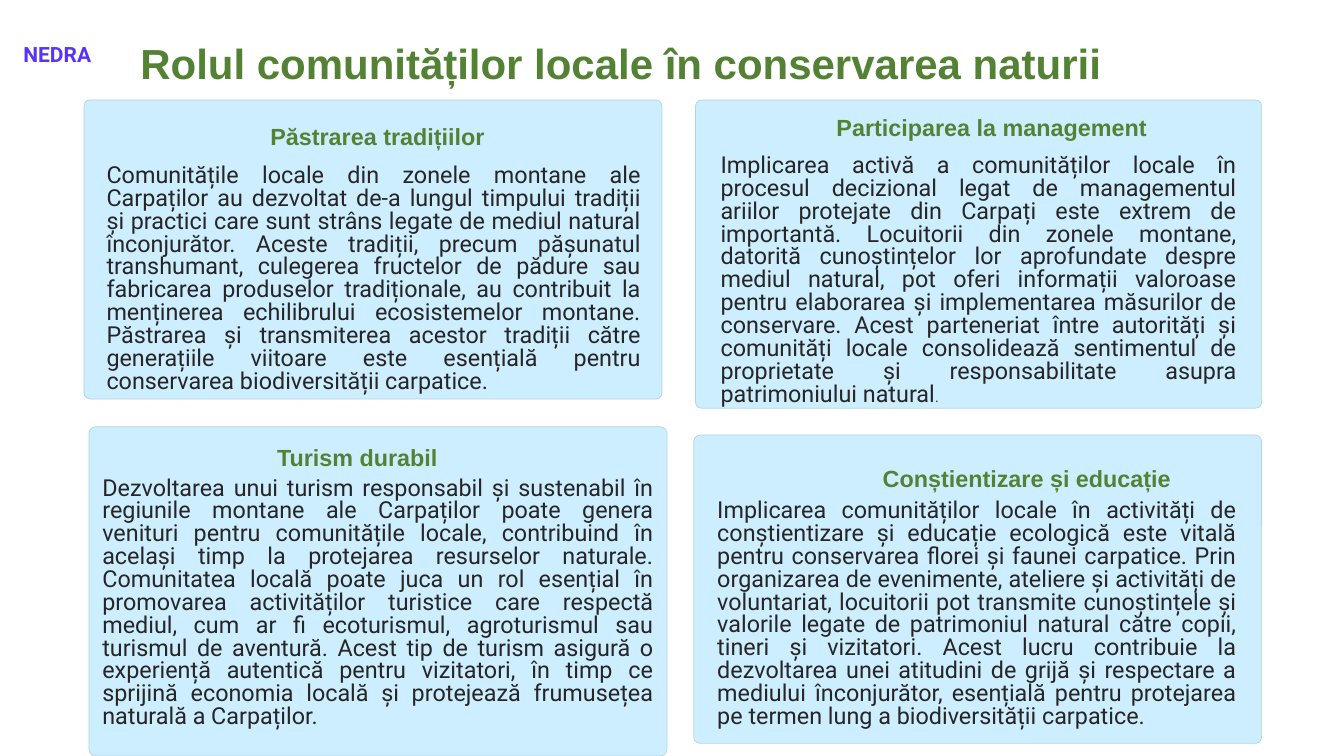
from dataclasses import dataclass

from pptx import Presentation
from pptx.dml.color import RGBColor
from pptx.enum.shapes import MSO_SHAPE
from pptx.enum.text import MSO_ANCHOR, MSO_AUTO_SIZE, PP_ALIGN
from pptx.util import Inches, Pt


@dataclass(frozen=True)
class Theme:
    heading_font: str = "Arial"
    body_font: str = "Roboto"
    green: str = "548235"
    ink: str = "272525"
    violet: str = "5A33F9"
    card_fill: str = "CCEEFF"
    card_line: str = "B2D4E5"
    title_size: float = 36
    text_size: float = 20
    label_size: float = 18
    small_size: float = 12.2


THEME = Theme()

CARDS = [
    {
        "box": (1, 1.19, 6.88, 3.56),
        "heading": "Păstrarea tradițiilor",
        "heading_box": (3.12, 1.47, 3.25, 0.19),
        "body": "Comunitățile locale din zonele montane ale Carpaților au dezvoltat de-a lungul timpului "
                "tradiții și practici care sunt strâns legate de mediul natural înconjurător. Aceste "
                "tradiții, precum pășunatul transhumant, culegerea fructelor de pădure sau fabricarea "
                "produselor tradiționale, au contribuit la menținerea echilibrului ecosistemelor montane. "
                "Păstrarea și transmiterea acestor tradiții către generațiile viitoare este esențială "
                "pentru conservarea biodiversității carpatice.",
        "body_box": (1.17, 1.92, 6.56, 3.26),
    },
    {
        "box": (8.28, 1.19, 6.74, 3.67),
        "heading": "Participarea la management",
        "heading_box": (9.86, 1.37, 2.91, 0.27),
        "body": "Implicarea activă a comunităților locale în procesul decizional legat de managementul "
                "ariilor protejate din Carpați este extrem de importantă. Locuitorii din zonele montane, "
                "datorită cunoștințelor lor aprofundate despre mediul natural, pot oferi informații "
                "valoroase pentru elaborarea și implementarea măsurilor de conservare. Acest parteneriat "
                "între autorități și comunități locale consolidează sentimentul de proprietate și "
                "responsabilitate asupra patrimoniului natural",
        "body_box": (8.48, 1.8, 6.34, 2.95),
        "ending": ".",
    },
    {
        "box": (1.06, 5.08, 6.88, 3.92),
        "heading": "Turism durabil",
        "heading_box": (3.2, 5.3, 2.13, 0.27),
        "body": "Dezvoltarea unui turism responsabil și sustenabil în regiunile montane ale Carpaților "
                "poate genera venituri pentru comunitățile locale, contribuind în același timp la "
                "protejarea resurselor naturale. Comunitatea locală poate juca un rol esențial în "
                "promovarea activităților turistice care respectă mediul, cum ar fi ecoturismul, "
                "agroturismul sau turismul de aventură. Acest tip de turism asigură o experiență autentică "
                "pentru vizitatori, în timp ce sprijină economia locală și protejează frumusețea naturală "
                "a Carpaților.",
        "body_box": (1.12, 5.64, 6.76, 3.09),
    },
    {
        "box": (8.26, 5.18, 6.76, 3.67),
        "heading": "Conștientizare și educație",
        "heading_box": (10.41, 5.55, 2.7, 0.27),
        "body": "Implicarea comunităților locale în activități de conștientizare și educație ecologică "
                "este vitală pentru conservarea florei și faunei carpatice. Prin organizarea de "
                "evenimente, ateliere și activități de voluntariat, locuitorii pot transmite cunoștințele "
                "și valorile legate de patrimoniul natural către copii, tineri și vizitatori. Acest lucru "
                "contribuie la dezvoltarea unei atitudini de grijă și respectare a mediului înconjurător, "
                "esențială pentru protejarea pe termen lung a biodiversității carpatice.",
        "body_box": (8.44, 5.91, 6.38, 3.26),
    },
]


def add_run(paragraph, text, *, font, size, color, bold=False):
    run = paragraph.add_run()
    run.text = text
    run.font.name = font
    run.font.size = Pt(size)
    run.font.bold = bold
    run.font.color.rgb = RGBColor.from_string(color)


def write_text(shape, text, *, spacing, align=PP_ALIGN.LEFT, wrap=True, **font_format):
    frame = shape.text_frame
    frame.word_wrap = wrap
    frame.auto_size = MSO_AUTO_SIZE.NONE
    frame.vertical_anchor = MSO_ANCHOR.TOP
    paragraph = frame.paragraphs[0]
    paragraph.alignment = align
    paragraph.line_spacing = Pt(spacing)
    add_run(paragraph, text, **font_format)
    return paragraph


class SlideBuilder:
    def __init__(self, slide, theme):
        self.slide = slide
        self.theme = theme

    def text_box(self, box, text, **text_format):
        shape = self.slide.shapes.add_textbox(*map(Inches, box))
        return write_text(shape, text, **text_format)

    def title(self, box, text):
        shape = self.slide.shapes.title
        shape.left, shape.top, shape.width, shape.height = map(Inches, box)
        write_text(shape, text, spacing=38.3, align=PP_ALIGN.CENTER, font=self.theme.heading_font,
                   size=self.theme.title_size, color=self.theme.green, bold=True)

    def label(self, box, text):
        self.text_box(box, text, spacing=29.2, font=self.theme.body_font,
                      size=self.theme.label_size, color=self.theme.violet, bold=True)

    def panel(self, box):
        shape = self.slide.shapes.add_shape(MSO_SHAPE.ROUNDED_RECTANGLE, *map(Inches, box))
        shape.adjustments[0] = 0.02
        shape.shadow.inherit = False
        shape.fill.solid()
        shape.fill.fore_color.rgb = RGBColor.from_string(self.theme.card_fill)
        shape.line.color.rgb = RGBColor.from_string(self.theme.card_line)
        shape.line.width = Pt(0.6)

    def card(self, box, heading, heading_box, body, body_box, ending=""):
        self.panel(box)
        self.text_box(heading_box, heading, spacing=19.1, wrap=False, font=self.theme.heading_font,
                      size=self.theme.text_size, color=self.theme.green, bold=True)
        paragraph = self.text_box(body_box, body, spacing=19.6, align=PP_ALIGN.JUSTIFY,
                                  font=self.theme.body_font, size=self.theme.text_size,
                                  color=self.theme.ink)
        if ending:
            add_run(paragraph, ending, font=self.theme.body_font,
                    size=self.theme.small_size, color=self.theme.ink)


def main():
    presentation = Presentation()
    presentation.slide_width = Inches(16)
    presentation.slide_height = Inches(9)
    title_only = presentation.slide_layouts.get_by_name("Title Only")
    builder = SlideBuilder(presentation.slides.add_slide(title_only), THEME)
    builder.title((1.04, 0.47, 12.71, 1.06), "Rolul comunităților locale în conservarea naturii")
    for card in CARDS:
        builder.card(**card)
    builder.label((0.18, 0.34, 8, 0.47), "NEDRA")
    presentation.save("out.pptx")


if __name__ == "__main__":
    main()
